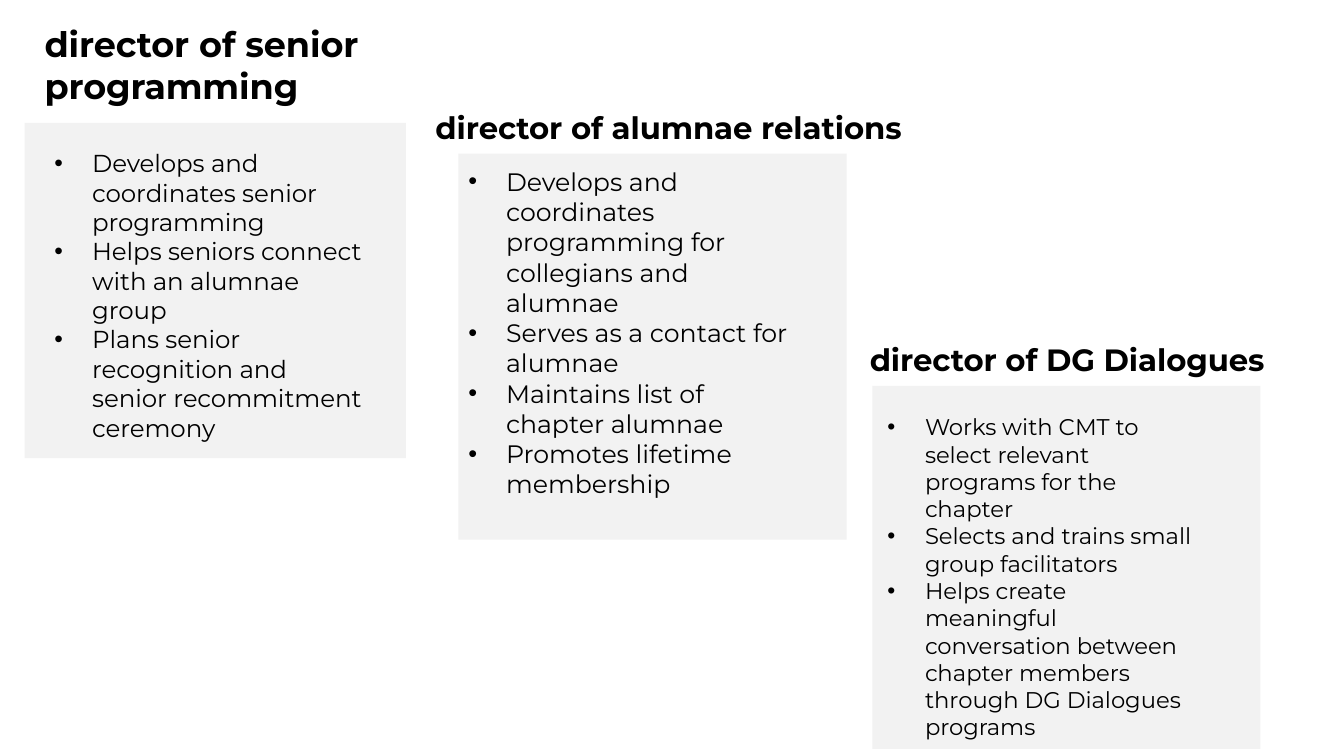
"""Build a slide describing three director roles, each a heading over a bulleted panel."""
from lxml import etree
from pptx import Presentation
from pptx import util as u
from pptx.dml.color import RGBColor
from pptx.enum import shapes, text
from pptx.oxml.ns import qn

FONT = "Montserrat"
COLORS = {"ink": "000000", "panel": "F2F2F2"}
ROLES = [
    {
        "heading": "director of senior programming",
        "heading_box": (0.2, 0.1, 4.88, 0.76), "heading_size": 10, "centered": False,
        "panel": (0.25, 1.24, 3.84, 3.38),
        "duties_box": (0.3, 1.37, 3.63, 3.25), "duties_size": 7,
        "duties": [
            "Develops and coordinates senior programming",
            "Helps seniors connect with an alumnae group",
            "Plans senior recognition and senior recommitment ceremony",
        ],
    },
    {
        "heading": "director of alumnae relations",
        "heading_box": (4.01, 1.09, 5.46, 0.48), "heading_size": 8.8, "centered": True,
        "panel": (4.62, 1.55, 3.91, 3.89),
        "duties_box": (4.47, 1.55, 3.91, 3.63), "duties_size": 7.2,
        "duties": [
            "Develops and coordinates programming for collegians and alumnae",
            "Serves as a contact for alumnae",
            "Maintains list of chapter alumnae",
            "Promotes lifetime membership",
        ],
    },
    {
        "heading": "director of DG Dialogues",
        "heading_box": (8.33, 3.43, 4.85, 0.76), "heading_size": 8.8, "centered": True,
        "panel": (8.79, 3.89, 3.91, 3.66),
        "duties_box": (8.69, 4.04, 3.63, 3.58), "duties_size": 6.5,
        "duties": [
            "Works with CMT to select relevant programs for the chapter",
            "Selects and trains small group facilitators",
            "Helps create meaningful conversation between chapter members "
            "through DG Dialogues programs",
        ],
    },
]


def cm_box(box):
    """Convert a box in centimetres to lengths."""
    return [u.Cm(v) for v in box]


def add_text_frame(s, box):
    """Add a wrapping text box and return its text frame."""
    tf = s.shapes.add_textbox(*cm_box(box)).text_frame
    tf.word_wrap = True
    return tf


def add_run(p, content, size, bold=False):
    """Add one styled run to a paragraph."""
    r = p.add_run()
    r.text = content
    r.font.name = FONT
    r.font.size = u.Pt(size)
    r.font.bold = bold
    r.font.color.rgb = RGBColor.from_string(COLORS["ink"])


def add_heading(s, content, box, size, centered):
    """Add a bold role heading."""
    tf = add_text_frame(s, box)
    p = tf.paragraphs[0]
    if centered:
        tf.margin_left = tf.margin_right = u.Cm(0.1)
        tf.margin_top = tf.margin_bottom = u.Cm(0.05)
        p.alignment = text.PP_ALIGN.CENTER
        p.line_spacing = 0.9
    add_run(p, content, size, bold=True)


def add_panel(s, box):
    """Add a plain filled rectangle."""
    sp = s.shapes.add_shape(shapes.MSO_SHAPE.RECTANGLE, *cm_box(box))
    sp.shadow.inherit = False
    sp.fill.solid()
    sp.fill.fore_color.rgb = RGBColor.from_string(COLORS["panel"])
    sp.line.fill.background()


def set_bullet(p):
    """Give a paragraph a hanging round bullet."""
    indent = u.Cm(0.38)
    pPr = p._p.get_or_add_pPr()
    pPr.set("marL", str(indent))
    pPr.set("indent", str(-indent))
    etree.SubElement(pPr, qn("a:buFont"), typeface="Arial")
    etree.SubElement(pPr, qn("a:buChar"), char="•")


def add_duties(s, duties, box, size):
    """Add a bulleted list of duties."""
    tf = add_text_frame(s, box)
    tf.auto_size = text.MSO_AUTO_SIZE.SHAPE_TO_FIT_TEXT
    for i, duty in enumerate(duties):
        p = tf.add_paragraph() if i else tf.paragraphs[0]
        set_bullet(p)
        add_run(p, duty, size)


def main():
    """Build and save the slide."""
    prs = Presentation()
    prs.slide_width, prs.slide_height = u.Cm(13.54), u.Cm(7.62)
    s = prs.slides.add_slide(prs.slide_layouts[6])
    for role in ROLES:
        add_heading(s, role["heading"], role["heading_box"],
                    role["heading_size"], role["centered"])
        add_panel(s, role["panel"])
        add_duties(s, role["duties"], role["duties_box"], role["duties_size"])
    prs.save("out.pptx")


if __name__ == "__main__":
    main()
